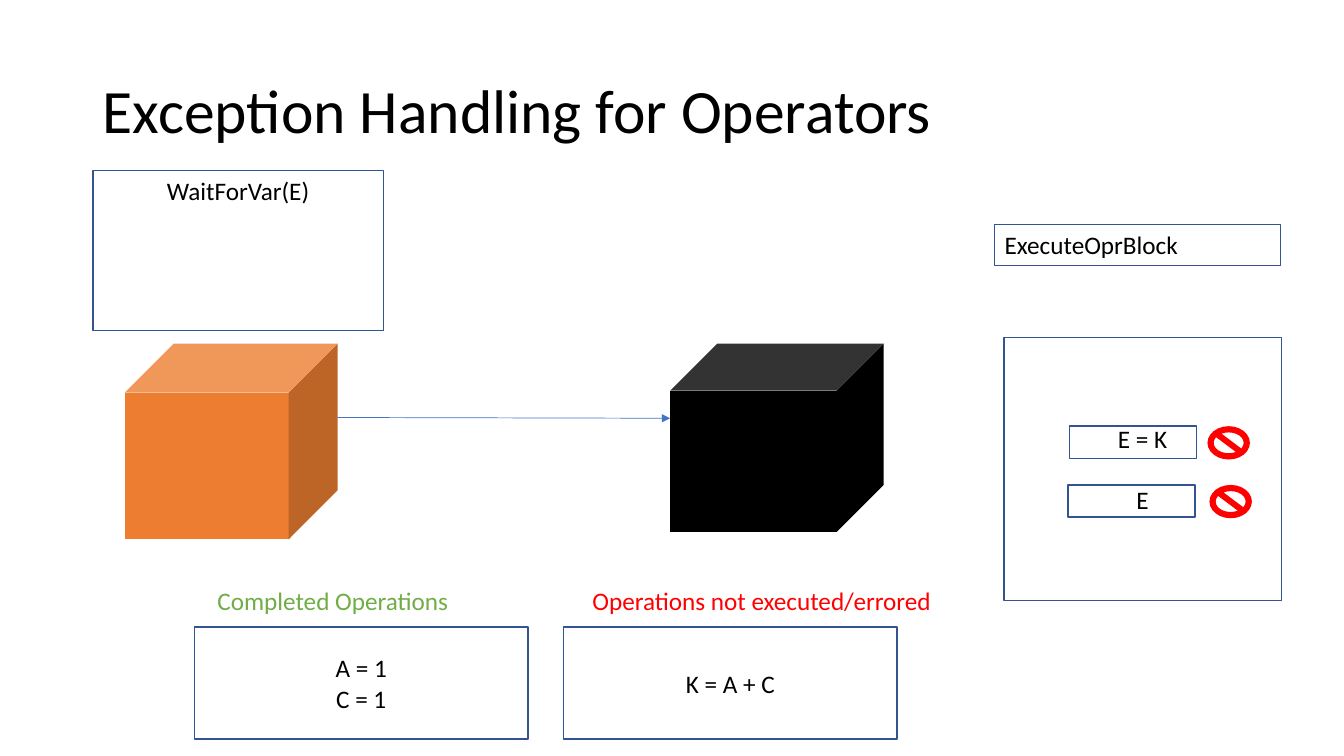
from dataclasses import dataclass

from lxml import etree
from pptx import Presentation
from pptx import util as u
from pptx.dml.color import RGBColor
from pptx.enum import shapes, text
from pptx.oxml.ns import qn

KIND = shapes.MSO_SHAPE
ALIGN = text.PP_ALIGN
ANCHOR = text.MSO_ANCHOR


@dataclass(frozen=True)
class Theme:
    font: str = "Calibri"
    head: float = 44
    body: float = 18
    ink: str = "000000"
    paper: str = "FFFFFF"
    edge: str = "325491"
    link: str = "4472C4"
    source: str = "ED7D31"
    done: str = "70AD47"
    error: str = "FF0000"


def write(shape, words, *, font, size, color, align=ALIGN.LEFT,
          anchor=ANCHOR.TOP, gap=0, lead=None):
    frame = shape.text_frame
    frame.word_wrap = True
    frame.vertical_anchor = anchor
    frame.text = words
    for i, para in enumerate(frame.paragraphs):
        para.alignment = align
        para.space_before = u.Pt(gap if i else 0)
        if lead:
            para.line_spacing = lead
        style = para.runs[0].font
        style.name, style.size = font, u.Pt(size)
        style.color.rgb = RGBColor.from_string(color)


class Board:
    """Draws styled elements on one slide, with lengths in centimetres."""

    def __init__(self, slide, theme):
        self.slide, self.theme = slide, theme

    def text(self, shape, words, **form):
        base = dict(font=self.theme.font, size=self.theme.body,
                    color=self.theme.ink)
        write(shape, words, **(base | form))

    def label(self, box, words, **form):
        shape = self.slide.shapes.add_textbox(*map(u.Cm, box))
        self.text(shape, words, **form)

    def shape(self, kind, box, fill=None, edge=None, width=1):
        shape = self.slide.shapes.add_shape(kind, *map(u.Cm, box))
        shape.shadow.inherit = False
        if fill:
            shape.fill.solid()
            shape.fill.fore_color.rgb = RGBColor.from_string(fill)
        else:
            shape.fill.background()
        if edge:
            shape.line.color.rgb = RGBColor.from_string(edge)
            shape.line.width = u.Pt(width)
        else:
            shape.line.fill.background()
        return shape

    def panel(self, box, words, fill=None, width=1, **form):
        shape = self.shape(KIND.RECTANGLE, box, fill, self.theme.edge, width)
        self.text(shape, words, **form)

    def arrow(self, start, end):
        line = self.slide.shapes.add_connector(
            shapes.MSO_CONNECTOR.STRAIGHT, *map(u.Cm, start + end))
        line.line.color.rgb = RGBColor.from_string(self.theme.link)
        line.line.width = u.Pt(0.5)
        tip = etree.SubElement(line.line._get_or_add_ln(), qn("a:tailEnd"))
        tip.set("type", "triangle")
        etree.SubElement(line._element.spPr, qn("a:effectLst"))


def main():
    deck = Presentation()
    deck.slide_width, deck.slide_height = u.Cm(33.87), u.Cm(19.05)
    theme = Theme()
    board = Board(deck.slides.add_slide(deck.slide_layouts[6]), theme)
    mid = dict(align=ALIGN.CENTER, anchor=ANCHOR.MIDDLE)

    board.label((2.34, 1.02, 29.21, 3.68), "Exception Handling for Operators",
                size=theme.head, anchor=ANCHOR.MIDDLE, lead=0.9)

    board.shape(KIND.CUBE, (16.89, 8.66, 5.38, 4.75), theme.ink)
    board.shape(KIND.CUBE, (3.15, 8.66, 5.36, 4.93), theme.source)
    board.arrow((8.51, 10.52), (16.89, 10.54))
    board.panel((2.34, 4.29, 7.32, 4.04), "WaitForVar(E)", theme.paper,
                align=ALIGN.CENTER)

    results = (
        (4.9, "A = 1\nC = 1", 5.23, "Completed Operations", theme.done),
        (14.2, "K = A + C", 14.68, "Operations not executed/errored",
         theme.error),
    )
    for left, code, start, name, color in results:
        board.panel((left, 15.8, 8.41, 2.82), code, theme.paper, **mid)
        board.label((start, 14.63, 9.32, 1.02), name, color=color)

    board.panel((25.07, 5.66, 7.19, 1.02), "ExecuteOprBlock", width=0.75)
    board.panel((25.3, 8.51, 6.99, 6.63), "E = K\nE", theme.paper,
                gap=22, **mid)
    for top, left, sign in ((10.74, 26.95, 30.43), (12.22, 26.92, 30.48)):
        board.shape(KIND.FLOWCHART_PROCESS, (left, top, 3.2, 0.81),
                    edge=theme.edge)
        board.shape(KIND.NO_SYMBOL, (sign, top, 1.07, 0.84), theme.error)

    deck.save("out.pptx")


if __name__ == "__main__":
    main()
